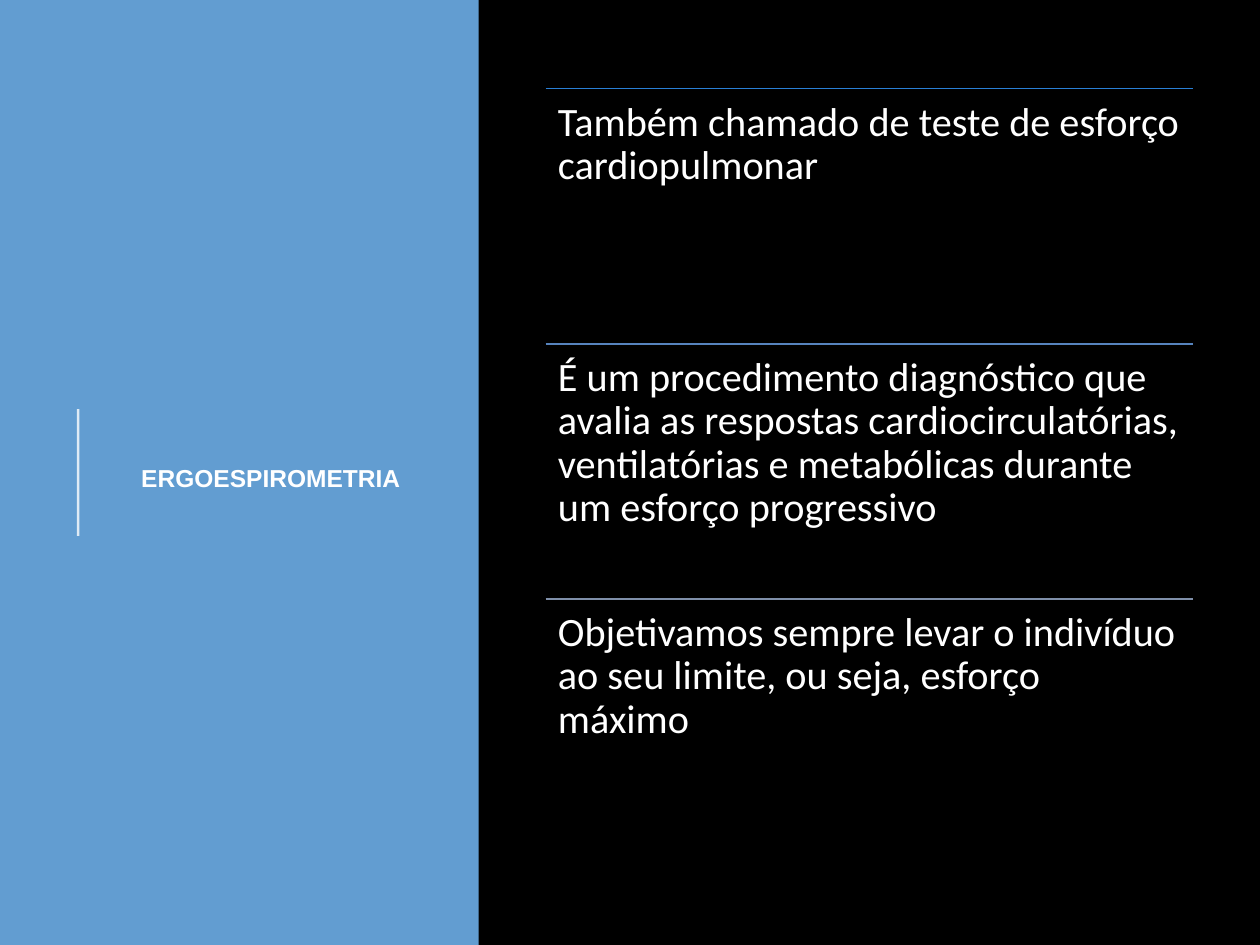
from dataclasses import dataclass

from lxml.etree import SubElement
from pptx import Presentation
from pptx.dml.color import RGBColor
from pptx.enum.shapes import MSO_CONNECTOR, MSO_SHAPE
from pptx.enum.text import MSO_ANCHOR, PP_ALIGN
from pptx.oxml.ns import qn
from pptx.util import Inches, Pt

WIDTH, HEIGHT = 10, 7.5
COLORS = {
    "background": "000000",
    "panel": "629DD1",
    "text": "FFFFFF",
    "rule_1": "297FD5",
    "rule_2": "5683BD",
    "rule_3": "7F8FA9",
}
STATEMENTS = [
    ("rule_1", "Também chamado de teste de esforço cardiopulmonar"),
    ("rule_2", "É um procedimento diagnóstico que avalia as respostas "
               "cardiocirculatórias, ventilatórias e metabólicas durante "
               "um esforço progressivo"),
    ("rule_3", "Objetivamos sempre levar o indivíduo ao seu limite, "
               "ou seja, esforço máximo"),
]


def color(name):
    return RGBColor.from_string(COLORS[name])


def across(share):
    return Inches(WIDTH * share)


def down(share):
    return Inches(HEIGHT * share)


@dataclass
class SlideStyle:
    slide: object
    title_font: str = "Arial"
    body_font: str = "Calibri"
    title_size: int = 14
    body_size: int = 23

    def background(self, name):
        fill = self.slide.background.fill
        fill.solid()
        fill.fore_color.rgb = color(name)

    def panel(self, left, top, width, height, name):
        panel = self.slide.shapes.add_shape(
            MSO_SHAPE.RECTANGLE, across(left), down(top), across(width), down(height))
        panel.shadow.inherit = False
        panel.fill.solid()
        panel.fill.fore_color.rgb = color(name)
        panel.line.fill.background()

    def rule(self, start, end, name, weight, opacity=100):
        rule = self.slide.shapes.add_connector(
            MSO_CONNECTOR.STRAIGHT,
            across(start[0]), down(start[1]), across(end[0]), down(end[1]))
        rule.line.color.rgb = color(name)
        rule.line.width = Pt(weight)
        properties = rule._element.spPr
        SubElement(properties, qn("a:effectLst"))
        if opacity < 100:
            tint = properties.find(".//" + qn("a:srgbClr"))
            SubElement(tint, qn("a:alpha")).set("val", str(opacity * 1000))

    def text(self, left, top, width, height, words, font, size, bold=False):
        box = self.slide.shapes.add_textbox(
            across(left), down(top), across(width), down(height))
        frame = box.text_frame
        frame.word_wrap = True
        paragraph = frame.paragraphs[0]
        run = paragraph.add_run()
        run.text = words
        run.font.name = font
        run.font.size = Pt(size)
        run.font.bold = bold
        run.font.color.rgb = color("text")
        return frame, paragraph

    def title(self, left, top, width, height, words):
        frame, paragraph = self.text(
            left, top, width, height, words, self.title_font, self.title_size, True)
        frame.vertical_anchor = MSO_ANCHOR.MIDDLE
        paragraph.alignment = PP_ALIGN.CENTER

    def statement(self, left, top, width, height, words, rule_color):
        self.rule((left, top), (left + width, top), rule_color, 0.75)
        frame, paragraph = self.text(
            left, top, width, height, words, self.body_font, self.body_size)
        frame.margin_left = frame.margin_right = Inches(0.1)
        frame.margin_top = frame.margin_bottom = Inches(0.1)
        paragraph.line_spacing = 0.9


def main():
    presentation = Presentation()
    presentation.slide_width = Inches(WIDTH)
    presentation.slide_height = Inches(HEIGHT)
    style = SlideStyle(presentation.slides.add_slide(presentation.slide_layouts[6]))

    style.background("background")
    style.panel(0, 0, 0.38, 1, "panel")
    style.title(0.077, 0.104, 0.276, 0.803, "ERGOESPIROMETRIA")
    style.rule((0.062, 0.567), (0.062, 0.433), "text", 1.5, opacity=80)

    first_top, row_height = 0.094, 0.27
    for row, (rule_color, words) in enumerate(STATEMENTS):
        style.statement(
            0.433, first_top + row * row_height, 0.514, row_height, words, rule_color)

    presentation.save("out.pptx")


if __name__ == "__main__":
    main()
